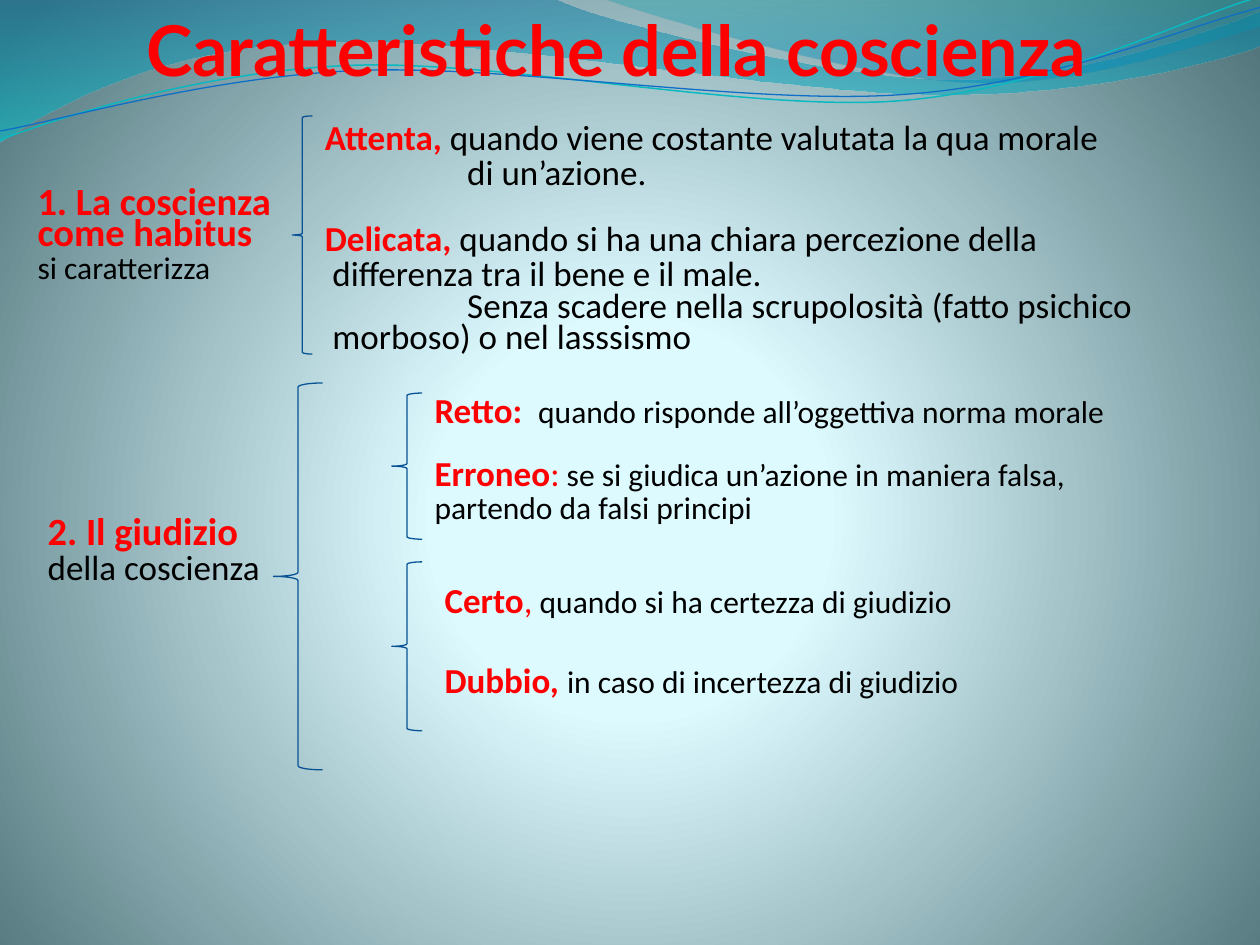
import math
import pptx
import pptx.util
import pptx.oxml
import pptx.oxml.ns
import pptx.dml.color
import pptx.enum.shapes
import pptx.enum.text

Inches, Pt, qn = pptx.util.Inches, pptx.util.Pt, pptx.oxml.ns.qn
INK = {"red": "FF0000", "black": "000000", "brace": "095295",
       "aqua": "0AB8BF", "blue": "0F6FC6"}
BACK = [(0, "DEFBFF", 100), (25, "DDFAFF", 100), (100, "52767C", 100)]
DOWN = '<a:lin ang="5400000" scaled="0"/>'
ROUND = ('<a:path path="circle"><a:fillToRect l="10000" t="110000" '
         'r="10000" b="100000"/></a:path>')
GRAIN = 1000
TILT = 357.3
BANDS = [
    ((0, 0), [(4.4, -0.01), (4.76, 0.17, 6.64, 0.63, 7.58, 0.63),
              (8.53, 0.63, 9.58, 0.26, 10, 0.09), (10.01, 0.36),
              (9.83, 0.44, 8.7, 0.76, 7.46, 0.75),
              (6.22, 0.75, 3.82, 0.28, 2.57, 0.34),
              (1.29, 0.36, 0.46, 0.83, -0.01, 1.13)],
     [(0, "0074A1", 45), (100, "00C6CF", 55)]),
    ((4.79, -0.01), [(5.09, 0.11, 6.82, 0.62, 7.69, 0.65),
                     (8.56, 0.69, 9.61, 0.32, 10, 0.21), (10, 0)],
     [(0, "00A1A9", 30), (80, "008BBF", 45)]),
]
WAVES = [
    ((0, 1.11), [(0.48, 0.93, 1.58, 0.57, 2.77, 0.52),
                 (3.95, 0.47, 5.93, 0.89, 7.13, 0.8),
                 (8.33, 0.71, 9.38, 0.15, 9.98, -0.02)],
     (4.99, 0.58), "aqua", 0.85),
    ((0, 1.04), [(0.47, 0.96, 1.64, 0.61, 2.83, 0.56),
                 (4.03, 0.51, 5.97, 0.84, 7.17, 0.75),
                 (8.36, 0.67, 9.41, 0.21, 10, 0.06)],
     (5, 0.59), "blue", 0.75),
]
BRACES = [(2.32, 0.92, 0.16, 1.89), (2.17, 3.04, 0.39, 3.07),
          (3.11, 3.12, 0.24, 1.16), (3.11, 4.46, 0.24, 1.34)]


def key(text, size=20):
    """Return a bold red run."""
    return text, size, "red", True


def say(text, size=18, ink="black"):
    """Return a plain run."""
    return text, size, ink, False


def para(*runs, left=0, first=0, **form):
    """Return a paragraph: its runs, indents and format values."""
    return runs, left, first, form


TIGHT, LOOSE = {"line_spacing": Pt(18)}, {"line_spacing": Pt(20)}
TEXTS = [
    ((0.2, 1.47, 2.6, 0.86), [
        para(key("1. La coscienza", 22), **TIGHT),
        para(key("come habitus", 22), **TIGHT),
        para(say("si caratterizza"), **TIGHT)]),
    ((2.48, 0.92, 7.52, 1.98), [
        para(key("Attenta,"),
             say(" quando viene costante valutata la qua morale\ndi un’azione.", 20),
             left=1.13, first=-1.13, space_after=Pt(18), **LOOSE),
        para(key("Delicata, "),
             say("quando si ha una chiara percezione della\n"
                 "differenza tra il bene e il male.", 20),
             left=0.06, first=-0.06, **LOOSE),
        para(say("Senza scadere nella scrupolosità (fatto psichico\n"
                 "morboso) o nel lasssismo", 20),
             left=0.06, first=1.07, **TIGHT)]),
    ((0.28, 4.06, 1.97, 0.66), [
        para(key("2. Il giudizio", 22), **LOOSE),
        para(say("della coscienza", 20), **LOOSE)]),
    ((3.35, 3.12, 5.91, 1.11), [
        para(key("Retto:  "), say("quando risponde all’oggettiva norma morale"),
             space_after=Pt(18), **TIGHT),
        para(key("Erroneo"), say(":", 20, "red"),
             say(" se si giudica un’azione in maniera falsa,\n"
                 "partendo da falsi principi"), **TIGHT)]),
    ((3.43, 4.54, 4.8, 1.08), [
        para(key("Certo"), say(",", 20, "red"),
             say(" quando si ha certezza di giudizio"), space_after=Pt(22)),
        para(key("Dubbio, "), say("in caso di incertezza di giudizio"))]),
]


def paint(host, stops, way):
    """Turn the solid fill of a host element into a gradient."""
    marks = "".join(
        f'<a:gs pos="{pos * 1000}"><a:srgbClr val="{ink}">'
        f'<a:alpha val="{alpha * 1000}"/></a:srgbClr></a:gs>'
        for pos, ink, alpha in stops)
    grad = pptx.oxml.parse_xml(
        f'<a:gradFill {pptx.oxml.ns.nsdecls("a")} rotWithShape="1">'
        f'<a:gsLst>{marks}</a:gsLst>{way}</a:gradFill>')
    host.replace(host.find(qn("a:solidFill")), grad)


def spin(dot, hub, angle):
    """Turn a point clockwise about a hub."""
    x, y = dot[0] - hub[0], dot[1] - hub[1]
    c, s = math.cos(math.radians(angle)), math.sin(math.radians(angle))
    return hub[0] + x * c - y * s, hub[1] + x * s + y * c


def bend(shape, parts):
    """Join each three steps of a curved part into one cubic curve."""
    steps = iter(list(shape.element.iter(qn("a:lnTo"))))
    for part in parts:
        step = next(steps)
        if len(part) == 6:
            step.tag = qn("a:cubicBezTo")
            for _ in range(2):
                extra = next(steps)
                step.append(extra[0])
                extra.getparent().remove(extra)


def draw(slide, start, parts, close, hub=(0, 0), tilt=0):
    """Add a freeform of lines and curves, tilted about its hub."""
    dots = [start] + [part[i:i + 2] for part in parts
                      for i in range(0, len(part), 2)]
    dots = [[v * GRAIN for v in spin(dot, hub, -tilt)] for dot in dots]
    pen = slide.shapes.build_freeform(*dots[0], scale=Inches(1) / GRAIN)
    pen.add_line_segments(dots[1:], close=close)
    shape = pen.convert_to_shape()
    bend(shape, parts)
    shape.rotation = tilt
    shape.shadow.inherit = False
    return shape


def stroke(shape, ink, width):
    """Leave a shape unfilled and colour its line."""
    shape.fill.background()
    shape.line.color.rgb = pptx.dml.color.RGBColor.from_string(INK[ink])
    shape.line.width = Pt(width)


def brace(slide, box):
    """Add a left brace."""
    kind = pptx.enum.shapes.MSO_SHAPE.LEFT_BRACE
    shape = slide.shapes.add_shape(kind, *map(Inches, box))
    shape.shadow.inherit = False
    stroke(shape, "brace", 0.75)


def write(line, runs, face):
    """Add runs to a paragraph, with line breaks where they ask for them."""
    for text, size, ink, bold in runs:
        for turn, piece in enumerate(text.split("\n")):
            if turn:
                line.add_line_break()
            run = line.add_run()
            run.text = piece
            form = {"name": face, "size": Pt(size), "bold": bold}
            for name, value in form.items():
                setattr(run.font, name, value)
            run.font.color.rgb = pptx.dml.color.RGBColor.from_string(INK[ink])


def label(slide, box, paras):
    """Add a text box of formatted paragraphs."""
    frame = slide.shapes.add_textbox(*map(Inches, box)).text_frame
    frame.word_wrap = True
    for turn, (runs, left, first, form) in enumerate(paras):
        line = frame.add_paragraph() if turn else frame.paragraphs[0]
        for name, value in form.items():
            setattr(line, name, value)
        if left:
            props = line._p.get_or_add_pPr()
            props.set("marL", str(Inches(left)))
            props.set("indent", str(Inches(first)))
        write(line, runs, "Calibri")


def head(slide, text):
    """Place and format the title in front of the waves."""
    title = slide.shapes.title
    place = {"left": 1.06, "top": 0, "width": 8.19, "height": 0.77}
    for name, value in place.items():
        setattr(title, name, Inches(value))
    form = {"word_wrap": True, "auto_size": pptx.enum.text.MSO_AUTO_SIZE.NONE,
            "vertical_anchor": pptx.enum.text.MSO_ANCHOR.TOP}
    for name, value in form.items():
        setattr(title.text_frame, name, value)
    line = title.text_frame.paragraphs[0]
    line.alignment = pptx.enum.text.PP_ALIGN.LEFT
    write(line, [key(text, 40)], "Lato")
    title.element.getparent().append(title.element)


def main():
    """Build and save the slide."""
    deck = pptx.Presentation()
    deck.slide_width, deck.slide_height = Inches(10), Inches(7.5)
    slide = deck.slides.add_slide(deck.slide_layouts[5])
    slide.background.fill.solid()
    paint(slide.element.find(".//" + qn("p:bgPr")), BACK, ROUND)
    for start, parts, stops in BANDS:
        band = draw(slide, start, parts, True)
        band.line.fill.background()
        band.fill.solid()
        paint(band.element.spPr, stops, DOWN)
    for start, parts, hub, ink, width in WAVES:
        stroke(draw(slide, start, parts, False, hub, TILT), ink, width)
    head(slide, "Caratteristiche della coscienza")
    for box in BRACES:
        brace(slide, box)
    for box, paras in TEXTS:
        label(slide, box, paras)
    deck.save("out.pptx")


if __name__ == "__main__":
    main()
